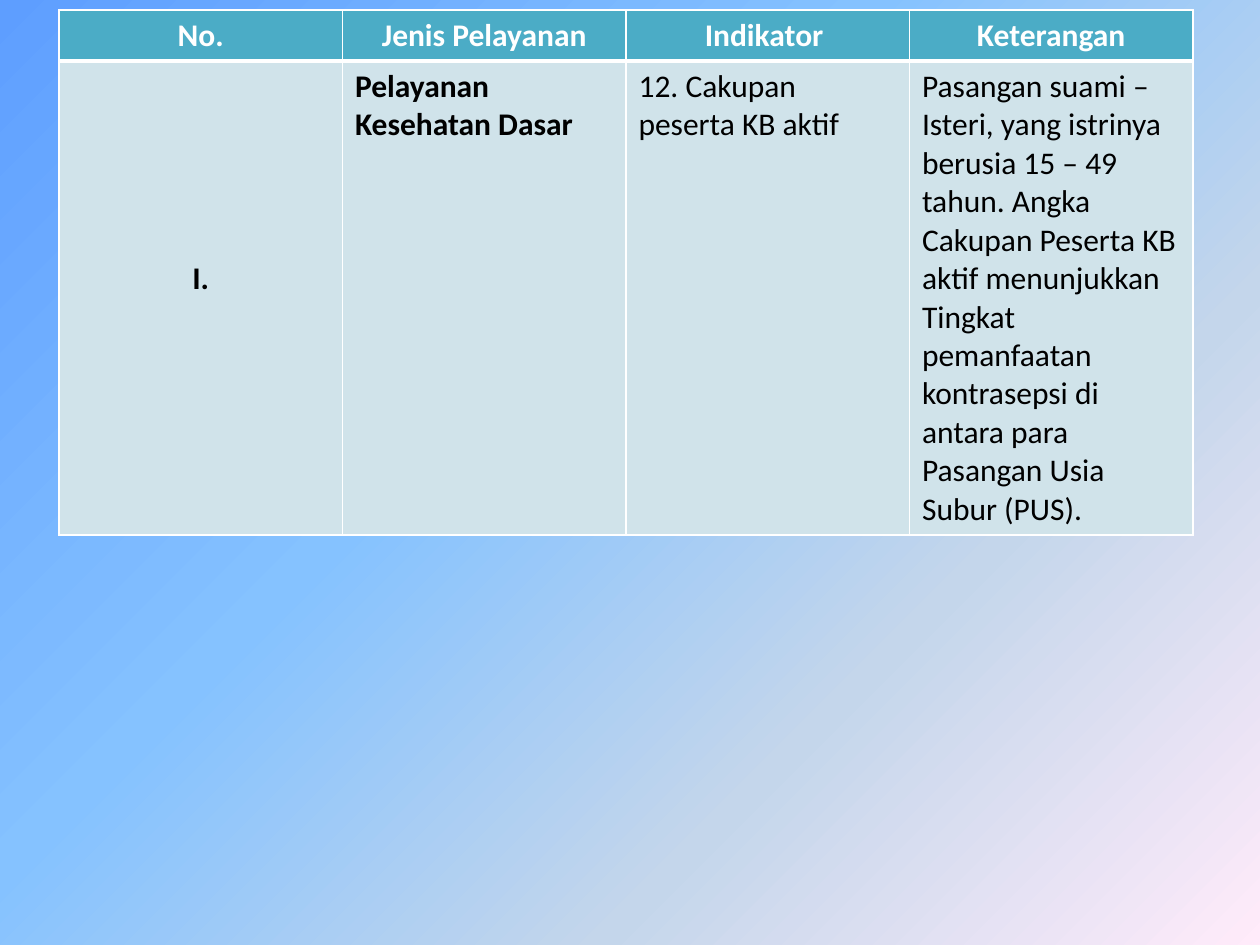
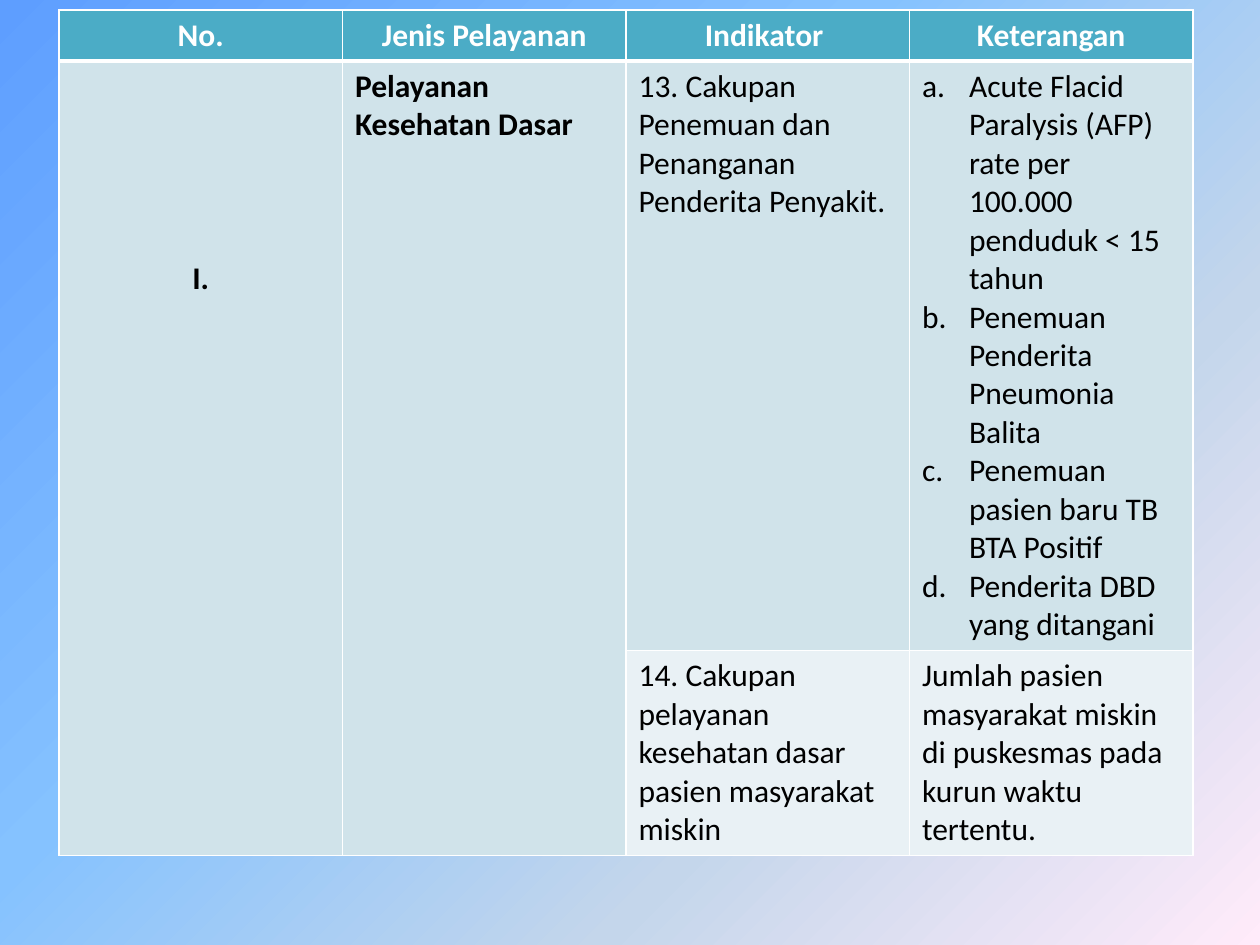
import pptx
import pptx.dml.color
import pptx.enum.text
import pptx.oxml
import pptx.oxml.ns
import pptx.util

SCALE = 914400 / 126
WHITE, BLACK = "FFFFFF", "000000"
TEAL, MIST, PALE = "4BACC6", "D0E3EA", "E9F1F5"
STOPS = [(0, "5E9EFF"), (40, "85C2FF"), (70, "C4D6EB"), (100, "FFEBFA")]
HEADS = ["No.", "Jenis Pelayanan", "Indikator ", "Keterangan"]
GROUP = ["I.", "Pelayanan Kesehatan Dasar"]
HEAD_H = 51
DROP = 198  # top margin that lowers the group number


def emu(px):
    return pptx.util.Emu(round(px * SCALE))


def color(code):
    return pptx.dml.color.RGBColor.from_string(code)


def node(text):
    """Parse one element in the drawing namespace."""
    tag, rest = text.split(" ", 1)
    return pptx.oxml.parse_xml(f"{tag} {pptx.oxml.ns.nsdecls('a')} {rest}")


def write(frame, text, size=18, ink=BLACK, bold=False, center=False, listed=False):
    """Fill a text frame; a list of strings gives one paragraph each."""
    lines = [text] if isinstance(text, str) else text
    for i, line in enumerate(lines):
        para = frame.paragraphs[0] if i == 0 else frame.add_paragraph()
        align = pptx.enum.text.PP_ALIGN
        para.alignment = align.CENTER if center else align.LEFT
        run = para.add_run()
        run.text = line
        run.font.name = "Calibri"
        run.font.size = pptx.util.Pt(size)
        run.font.bold = bold
        run.font.color.rgb = color(ink)
        if listed:
            props = para._p.get_or_add_pPr()
            props.set("marL", str(emu(47)))
            props.set("indent", str(-emu(47)))
            props.append(node('<a:buAutoNum type="alphaLcPeriod"/>'))


class Deck:
    def __init__(self):
        self.prs = pptx.Presentation()
        self.prs.slide_width = emu(1260)
        self.prs.slide_height = emu(945)
        self.slide = None

    def page(self):
        """Start a blank slide with the shared gradient."""
        self.slide = self.prs.slides.add_slide(self.prs.slide_layouts[6])
        self.slide.background.fill.gradient()
        grad = self.slide.element.xpath(".//p:bg//a:gradFill")[0]
        for part in list(grad):
            grad.remove(part)
        stops = "".join(
            f'<a:gs pos="{pos * 1000}"><a:srgbClr val="{code}"/></a:gs>'
            for pos, code in STOPS)
        grad.append(node(f"<a:gsLst >{stops}</a:gsLst>"))
        grad.append(node('<a:lin ang="2700000" scaled="0"/>'))

    def edge(self, cell, top=1, bottom=1):
        """Draw white borders, widths in points."""
        props = cell._tc.get_or_add_tcPr()
        sides = [("L", 1), ("R", 1), ("T", top), ("B", bottom)]
        for i, (side, width) in enumerate(sides):
            props.insert(i, node(
                f'<a:ln{side} w="{pptx.util.Pt(width)}"><a:solidFill>'
                f'<a:srgbClr val="{WHITE}"/></a:solidFill></a:ln{side}>'))

    def table(self, rows, heights):
        """Rows hold indicator and remark; the group spans all of them."""
        heights = [HEAD_H] + heights
        grid = self.slide.shapes.add_table(
            len(heights), len(HEADS), emu(59), emu(10),
            emu(1134), emu(sum(heights))).table
        grid.first_row = grid.horz_banding = False
        for row, high in zip(grid.rows, heights):
            row.height = emu(high)
        for r in range(len(heights)):
            for c in range(len(HEADS)):
                cell = grid.cell(r, c)
                cell.fill.solid()
                tone = TEAL if r == 0 else PALE if r == 2 and c > 1 else MIST
                cell.fill.fore_color.rgb = color(tone)
                self.edge(cell, top=3 if r == 1 else 1, bottom=3 if r == 0 else 1)
        for c, head in enumerate(HEADS):
            write(grid.cell(0, c).text_frame, head, ink=WHITE, bold=True, center=True)
        for c, text in enumerate(GROUP):
            cell = grid.cell(1, c)
            if len(rows) > 1:
                cell.merge(grid.cell(len(rows), c))
            write(cell.text_frame, text, bold=True, center=c == 0)
        grid.cell(1, 0).margin_top = emu(DROP)
        for r, row in enumerate(rows, 1):
            for c, text in enumerate(row, len(GROUP)):
                write(grid.cell(r, c).text_frame, text, listed=isinstance(text, list))


def main():
    deck = Deck()
    deck.page()
    deck.table([
        ("12. Cakupan peserta KB aktif",
         "Pasangan suami – Isteri, yang istrinya berusia 15 – 49 tahun. Angka "
         "Cakupan Peserta KB aktif menunjukkan Tingkat pemanfaatan kontrasepsi "
         "di antara para Pasangan Usia Subur (PUS)."),
    ], [473])
    deck.page()
    deck.table([
        ("13. Cakupan Penemuan dan Penanganan Penderita Penyakit.",
         ["Acute Flacid Paralysis (AFP) rate per 100.000 penduduk < 15 tahun",
          "Penemuan Penderita Pneumonia Balita",
          "Penemuan pasien baru TB BTA Positif",
          "Penderita DBD yang ditangani"]),
        ("14. Cakupan pelayanan kesehatan dasar pasien masyarakat miskin",
         "Jumlah pasien masyarakat miskin di puskesmas pada kurun waktu tertentu."),
    ], [588, 204])
    deck.prs.save("out.pptx")


if __name__ == "__main__":
    main()
